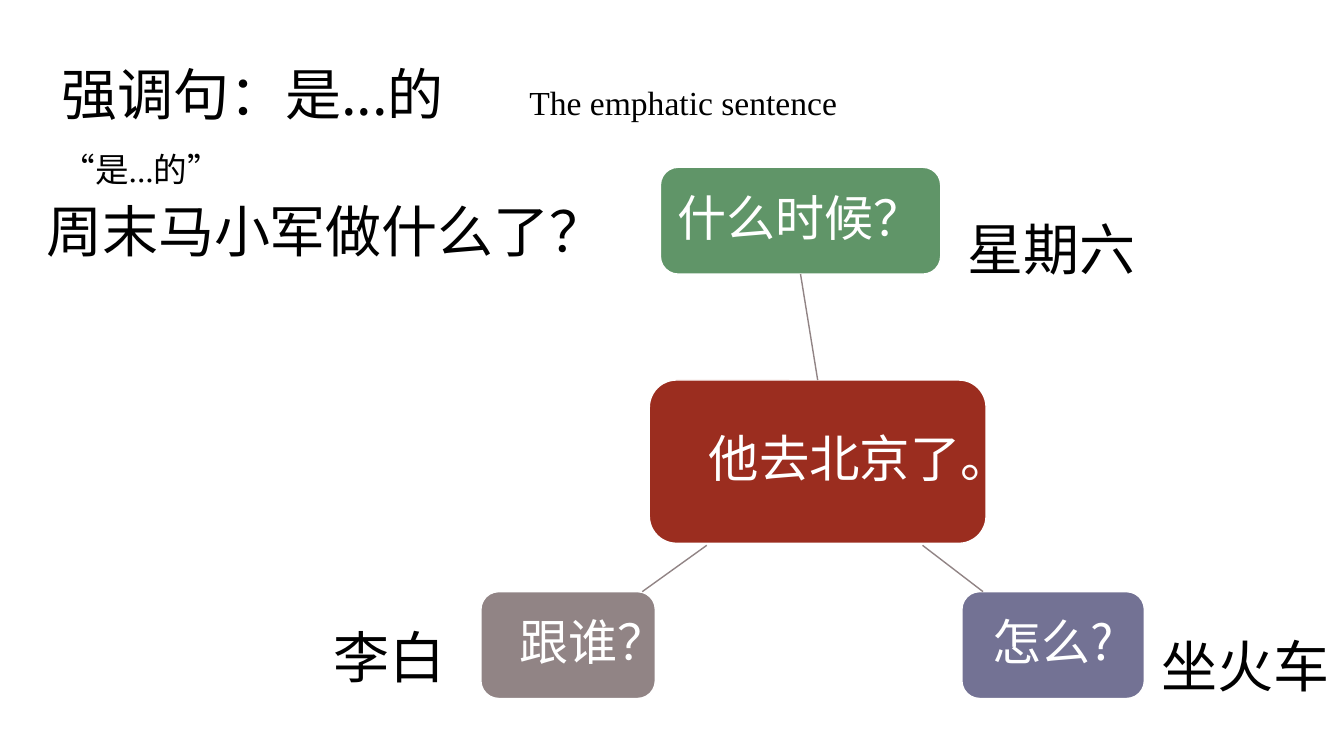
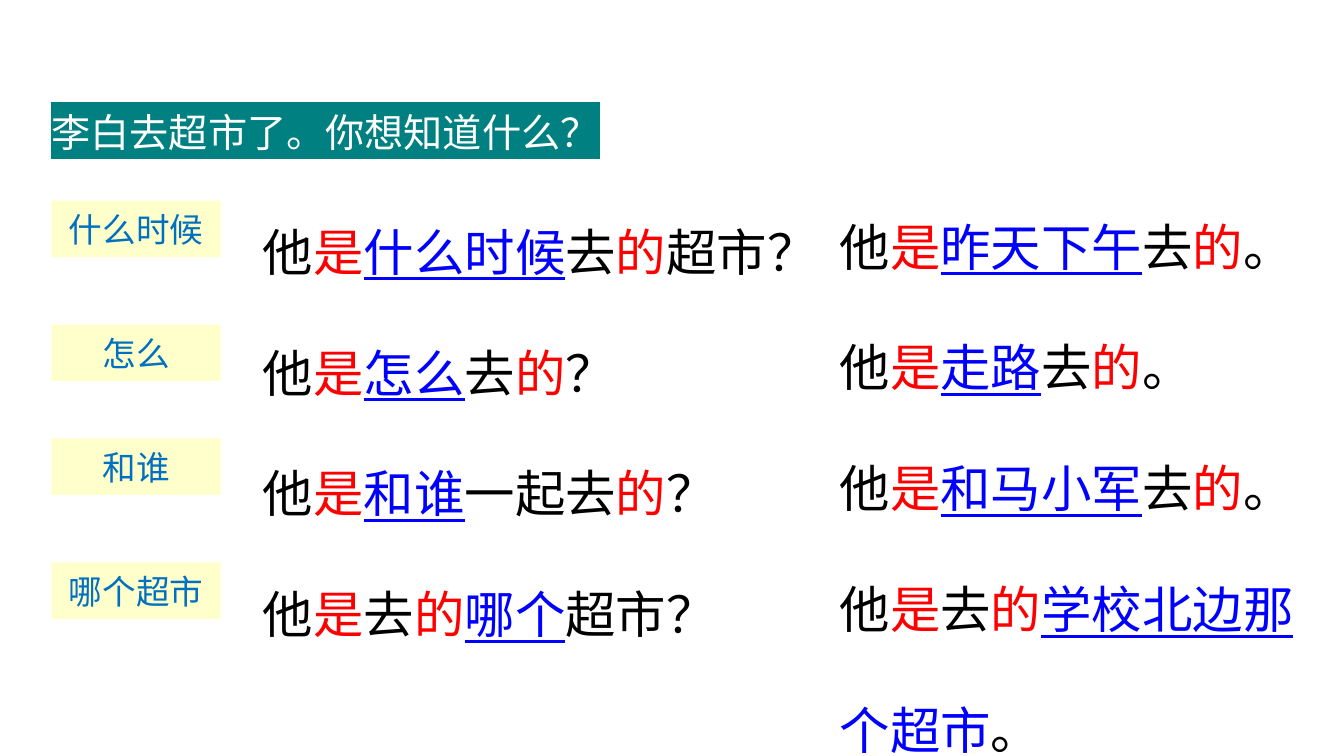
from dataclasses import dataclass

from lxml import etree
from pptx import Presentation
from pptx.dml.color import RGBColor
from pptx.enum.lang import MSO_LANGUAGE_ID
from pptx.enum.shapes import MSO_CONNECTOR, MSO_SHAPE
from pptx.enum.text import MSO_ANCHOR, MSO_AUTO_SIZE, PP_ALIGN
from pptx.oxml.ns import qn
from pptx.util import Inches, Pt

CHINESE = MSO_LANGUAGE_ID.SIMPLIFIED_CHINESE
STRAIGHT = MSO_CONNECTOR.STRAIGHT
ROUND = MSO_SHAPE.ROUNDED_RECTANGLE
RECT = MSO_SHAPE.RECTANGLE
TOP = MSO_ANCHOR.TOP
MIDDLE = MSO_ANCHOR.MIDDLE
FIXED = MSO_AUTO_SIZE.NONE
LEFT = PP_ALIGN.LEFT
CENTER = PP_ALIGN.CENTER


@dataclass(frozen=True)
class Theme:
    """Colours, fonts and type sizes of the lesson."""

    black: str = "000000"
    white: str = "FFFFFF"
    red: str = "FF0000"
    blue: str = "0000FF"
    teal: str = "008080"
    cream: str = "FFFFCC"
    azure: str = "0070C0"
    rust: str = "9B2D1F"
    green: str = "609568"
    violet: str = "737294"
    grey: str = "918485"
    serif: str = "Times New Roman"
    sans: str = "Noto Sans CJK SC"
    large: int = 40
    body: int = 36
    node: int = 35
    band: int = 28
    small: int = 24


THEME = Theme()

LABELS = (
    ("周末马小军做什么了？", 0.36, 1.23, 5.6),
    ("星期六", 9.5, 1.41, 2.48),
    ("坐火车", 11.42, 5.55, 1.9),
    ("李白", 3.21, 5.46, 2.25),
)
BRANCHES = (
    ("什么时候？", THEME.green, 1.78, 0, 2.78),
    ("怎么?", THEME.violet, 4.77, 4.21, 1.81),
    ("跟谁？", THEME.grey, 0, 4.21, 1.73),
)
LINKS = ((4.38, 3.75, 4.98, 4.21), (2.24, 3.75, 1.6, 4.21))
TOPICS = (("什么时候", 0), ("怎么", 1.23), ("和谁", 2.36), ("哪个超市", 3.59))
ASKS = (
    "他/是/_什么时候/去/的/超市？",
    "他/是/_怎么/去/的/？",
    "他/是/_和谁/一起去/的/？",
    "他/是/去/的/_哪个/超市？",
)
REPLIES = (
    "他/是/_昨天下午/去/的/。",
    "他/是/_走路/去/的/。",
    "他/是/_和马小军/去/的/。",
    "他/是/去/的/_学校北边那个超市/。",
)


def rgb(code):
    """Turn a hex code into a colour."""
    return RGBColor.from_string(code)


def inches(*sizes):
    """Turn numbers into lengths."""
    return [Inches(size) for size in sizes]


def add_run(para, text, size, color, face=THEME.serif, under=False):
    """Add one formatted run to a paragraph."""
    run = para.add_run()
    run.text = text
    font = run.font
    font.size = Pt(size)
    font.bold = False
    font.underline = under
    font.color.rgb = rgb(color)
    font.name = face
    font.language_id = CHINESE
    east = etree.SubElement(run._r.get_or_add_rPr(), qn("a:ea"))
    east.set("typeface", THEME.sans)
    return run


def mark(run, color):
    """Put a highlight behind a run."""
    light = etree.Element(qn("a:highlight"))
    etree.SubElement(light, qn("a:srgbClr")).set("val", color)
    run._r.rPr.find(qn("a:solidFill")).addnext(light)


def add_title(deck, box):
    """Add a title-only slide and return it with its title paragraph."""
    slide = deck.slides.add_slide(deck.slide_layouts[5])
    title = slide.shapes.title
    title.left, title.top, title.width, title.height = inches(*box)
    frame = title.text_frame
    frame.word_wrap = True
    frame.auto_size = FIXED
    frame.vertical_anchor = TOP
    para = frame.paragraphs[0]
    para.alignment = LEFT
    return slide, para


def add_text(slide, box):
    """Add an empty wrapping text box and return its frame."""
    frame = slide.shapes.add_textbox(*inches(*box)).text_frame
    frame.word_wrap = True
    return frame


def add_block(slide, kind, box, fill, text, size, color, edge=None):
    """Add a filled shape with centred text."""
    shape = slide.shapes.add_shape(kind, *inches(*box))
    shape.shadow.inherit = False
    shape.fill.solid()
    shape.fill.fore_color.rgb = rgb(fill)
    if edge:
        shape.line.color.rgb = rgb(edge)
        shape.line.width = Pt(1)
    else:
        shape.line.fill.background()
    frame = shape.text_frame
    frame.word_wrap = True
    frame.vertical_anchor = MIDDLE
    para = frame.paragraphs[0]
    para.alignment = CENTER
    add_run(para, text, size, color, THEME.sans)
    return shape


def add_node(slide, box, fill, text, size):
    """Add one rounded node of the mind map."""
    node = add_block(slide, ROUND, box, fill, text, size, THEME.white, THEME.white)
    frame = node.text_frame
    frame.margin_left = frame.margin_right = Inches(0.1)
    frame.margin_top = frame.margin_bottom = Inches(0.1)
    frame.paragraphs[0].line_spacing = 0.9
    return node


def add_link(slide, ends):
    """Add one thin grey line."""
    link = slide.shapes.add_connector(STRAIGHT, *inches(*ends))
    link.line.color.rgb = rgb(THEME.grey)
    link.line.width = Pt(1)
    etree.SubElement(link._element.spPr, qn("a:effectLst"))
    return link


def add_map(slide, left, top):
    """Draw the centre sentence with its three question nodes."""
    nodes = [
        add_node(slide, (left + x, top + y, width, 1.06), fill, text, THEME.node)
        for text, fill, x, y, width in BRANCHES
    ]
    box = (left + 1.67, top + 2.11, 3.34, 1.62)
    core = add_node(slide, box, THEME.rust, "他去北京了。", THEME.body)
    core.text_frame.margin_left = Inches(0.36)
    core.text_frame.margin_right = Inches(0.02)
    stem = add_link(slide, (left, top, left, top))
    stem.begin_connect(core, 0)
    stem.end_connect(nodes[0], 2)
    for x, y, right, base in LINKS:
        add_link(slide, (left + x, top + y, left + right, top + base))


def add_lines(slide, box, lines):
    """Write sentences with the pattern in red and the focus underlined."""
    frame = add_text(slide, box)
    for index, line in enumerate(lines):
        para = frame.add_paragraph() if index else frame.paragraphs[0]
        para.line_spacing = 2.0
        for part in line.split("/"):
            focus = part.startswith("_")
            color = THEME.red if part in ("是", "的") else THEME.black
            color = THEME.blue if focus else color
            add_run(para, part.lstrip("_"), THEME.body, color, under=focus)


def add_topics(slide, left, top):
    """Stack the question words in cream boxes."""
    for text, down in TOPICS:
        box = (left, top + down, 1.68, 0.56)
        add_block(slide, RECT, box, THEME.cream, text, THEME.small, THEME.azure)


def add_tab(para, place):
    """Set one left tab stop."""
    tabs = etree.SubElement(para._p.get_or_add_pPr(), qn("a:tabLst"))
    etree.SubElement(tabs, qn("a:tab"), pos=str(Inches(place)), algn="l")


def map_slide(deck):
    """Build the slide with the mind map."""
    slide, para = add_title(deck, (0.51, 0.58, 8.99, 0.73))
    add_tab(para, 4.64)
    para.line_spacing = Pt(45)
    add_run(para, "强调句：是...的", THEME.large, THEME.black, THEME.sans)
    add_run(para, "\tThe emphatic sentence", THEME.small, THEME.black)
    para.add_line_break()
    add_run(para, "“是...的”", THEME.small, THEME.black)
    add_map(slide, 4.77, 1.66)
    for text, left, top, width in LABELS:
        label = add_text(slide, (left, top, width, 1.24)).paragraphs[0]
        label.line_spacing = 2.0
        add_run(label, text, THEME.large, THEME.black)


def drill_slide(deck):
    """Build the slide with questions and answers."""
    slide, para = add_title(deck, (0.41, 0.56, 5.7, 0.9))
    para.line_spacing = 2.0
    run = add_run(para, "李白去超市了。你想知道什么？", THEME.band, THEME.white)
    mark(run, THEME.teal)
    add_lines(slide, (2.51, 1.54, 6.49, 4.76), ASKS)
    add_lines(slide, (8.23, 1.49, 4.75, 5.97), REPLIES)
    add_topics(slide, 0.51, 1.99)


def main():
    """Build and save the lesson."""
    deck = Presentation()
    deck.slide_width, deck.slide_height = inches(13.33, 7.5)
    map_slide(deck)
    drill_slide(deck)
    deck.save("out.pptx")


if __name__ == "__main__":
    main()
